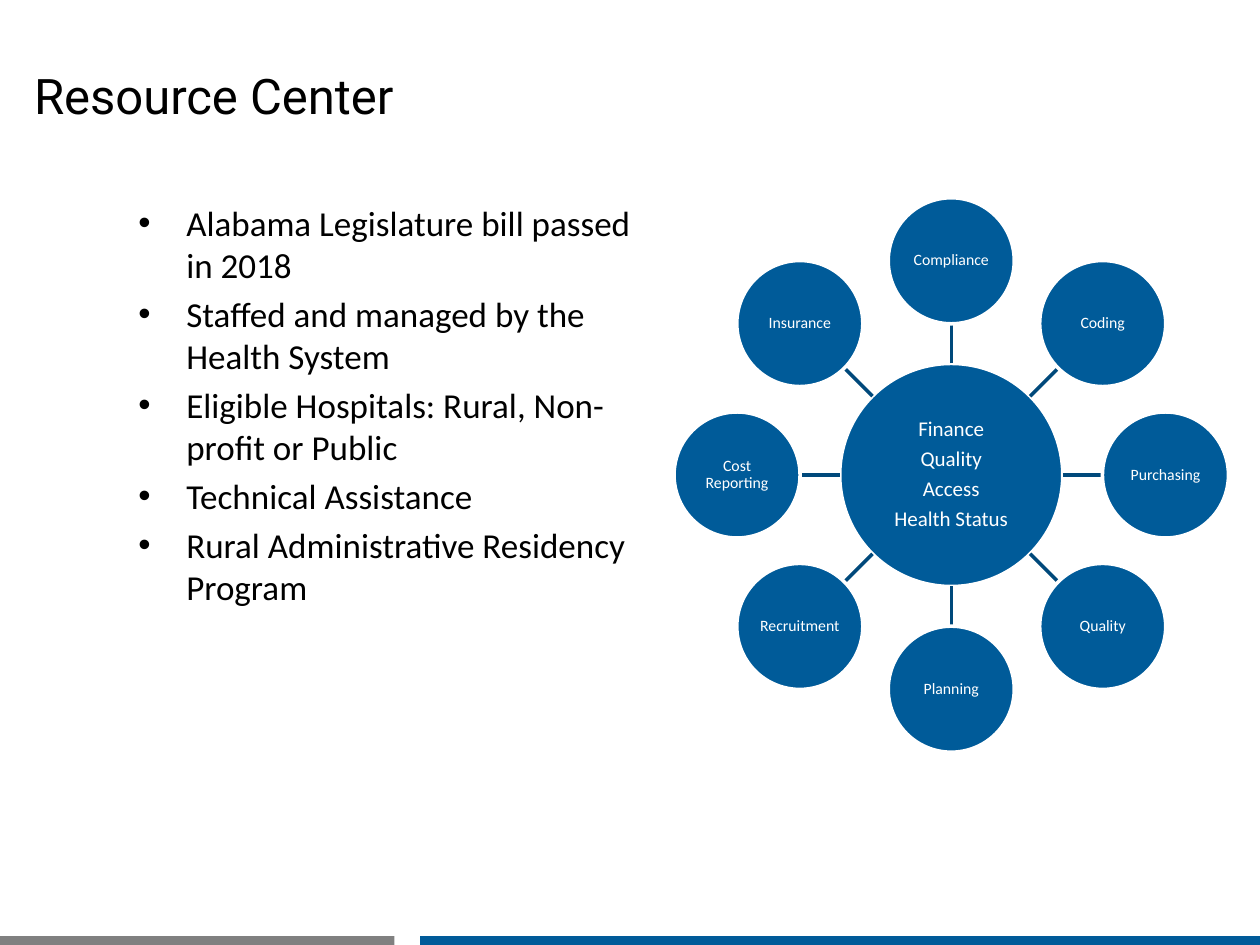
from math import cos, radians, sin

from lxml.etree import SubElement
from pptx import Presentation
from pptx.dml.color import RGBColor
from pptx.enum.shapes import MSO_CONNECTOR, MSO_SHAPE
from pptx.enum.text import MSO_ANCHOR, MSO_AUTO_SIZE, PP_ALIGN
from pptx.oxml.ns import qn
from pptx.util import Inches, Pt

BLUE, DARK_BLUE, GRAY = "005B99", "00497B", "808080"
BLACK, WHITE = "000000", "FFFFFF"

WIDTH, HEIGHT = 10, 7.5
HUB_X, HUB_Y = 7.55, 3.77
HUB_SIZE, TOPIC_SIZE, ORBIT = 1.77, 1, 1.7

BULLETS = [
    "Alabama Legislature bill passed in 2018",
    "Staffed and managed by the Health System",
    "Eligible Hospitals: Rural, Non-profit or Public",
    "Technical Assistance",
    "Rural Administrative Residency Program",
]
GOALS = ["Finance", "Quality", "Access", "Health Status"]
# Clockwise from the top
TOPICS = ["Compliance", "Coding", "Purchasing", "Quality",
          "Planning", "Recruitment", "Cost Reporting", "Insurance"]


def color(value):
    return RGBColor.from_string(value)


def add_bullet(paragraph, indent):
    properties = paragraph._p.get_or_add_pPr()
    properties.set("marL", str(Inches(indent)))
    properties.set("indent", str(-Inches(indent)))
    SubElement(properties, qn("a:buFont")).set("typeface", "Arial")
    SubElement(properties, qn("a:buChar")).set("char", "•")


def write_text(frame, lines, size, font="Calibri", fill=BLACK,
               align=PP_ALIGN.LEFT, anchor=MSO_ANCHOR.TOP, margin=None,
               gap=0, line_spacing=None, bullet_indent=None):
    frame.word_wrap = True
    frame.auto_size = MSO_AUTO_SIZE.NONE
    frame.vertical_anchor = anchor
    if margin is not None:
        frame.margin_left = frame.margin_right = Inches(margin)
        frame.margin_top = frame.margin_bottom = Inches(margin)
    for index, line in enumerate(lines):
        paragraph = frame.add_paragraph() if index else frame.paragraphs[0]
        paragraph.alignment = align
        paragraph.space_before = Pt(gap if index else 0)
        if line_spacing:
            paragraph.line_spacing = line_spacing
        if bullet_indent:
            add_bullet(paragraph, bullet_indent)
        run = paragraph.add_run()
        run.text = line
        run.font.name = font
        run.font.size = Pt(size)
        run.font.color.rgb = color(fill)


def add_title(slide, text):
    title = slide.shapes.title
    title.left, title.top = Inches(0.17), Inches(0.5)
    title.width, title.height = Inches(7), Inches(0.5)
    write_text(title.text_frame, [text], 28, font="Roboto",
               anchor=MSO_ANCHOR.MIDDLE)


def add_bullet_list(slide, lines):
    box = slide.shapes.add_textbox(Inches(1), Inches(1.55),
                                   Inches(4.32), Inches(4.95))
    write_text(box.text_frame, lines, 20, gap=4, bullet_indent=0.38)


def add_filled_shape(slide, kind, left, top, width, height, fill):
    shape = slide.shapes.add_shape(kind, Inches(left), Inches(top),
                                   Inches(width), Inches(height))
    shape.shadow.inherit = False
    shape.fill.solid()
    shape.fill.fore_color.rgb = color(fill)
    shape.line.fill.background()
    return shape


def add_circle(slide, center_x, center_y, diameter, lines, size):
    circle = add_filled_shape(slide, MSO_SHAPE.OVAL, center_x - diameter / 2,
                              center_y - diameter / 2, diameter, diameter, BLUE)
    circle.line.color.rgb = color(WHITE)
    circle.line.width = Pt(2)
    write_text(circle.text_frame, lines, size, fill=WHITE,
               align=PP_ALIGN.CENTER, anchor=MSO_ANCHOR.MIDDLE, margin=0.01,
               gap=0.35 * size, line_spacing=0.9)


def add_spoke(slide, start, end):
    spoke = slide.shapes.add_connector(
        MSO_CONNECTOR.STRAIGHT, *(Inches(value) for value in start + end))
    spoke.line.color.rgb = color(DARK_BLUE)
    spoke.line.width = Pt(2)
    SubElement(spoke._element.spPr, qn("a:effectLst"))


def point_on_orbit(angle, radius):
    return HUB_X + radius * sin(angle), HUB_Y - radius * cos(angle)


def add_radial_diagram(slide):
    add_circle(slide, HUB_X, HUB_Y, HUB_SIZE, GOALS, 12)
    for index, topic in enumerate(TOPICS):
        angle = radians(index * 360 / len(TOPICS))
        add_spoke(slide, point_on_orbit(angle, HUB_SIZE / 2),
                  point_on_orbit(angle, ORBIT - TOPIC_SIZE / 2))
        add_circle(slide, *point_on_orbit(angle, ORBIT), TOPIC_SIZE, [topic], 9)


def add_footer_bars(slide):
    for left, width, fill in ((WIDTH / 3, WIDTH * 2 / 3, BLUE), (0, 3.13, GRAY)):
        add_filled_shape(slide, MSO_SHAPE.RECTANGLE, left, HEIGHT - 0.07,
                         width, 0.07, fill)


def main():
    presentation = Presentation()
    presentation.slide_width = Inches(WIDTH)
    presentation.slide_height = Inches(HEIGHT)
    slide = presentation.slides.add_slide(presentation.slide_layouts[5])

    add_title(slide, "Resource Center")
    add_bullet_list(slide, BULLETS)
    add_radial_diagram(slide)
    add_footer_bars(slide)

    presentation.save("out.pptx")


if __name__ == "__main__":
    main()
